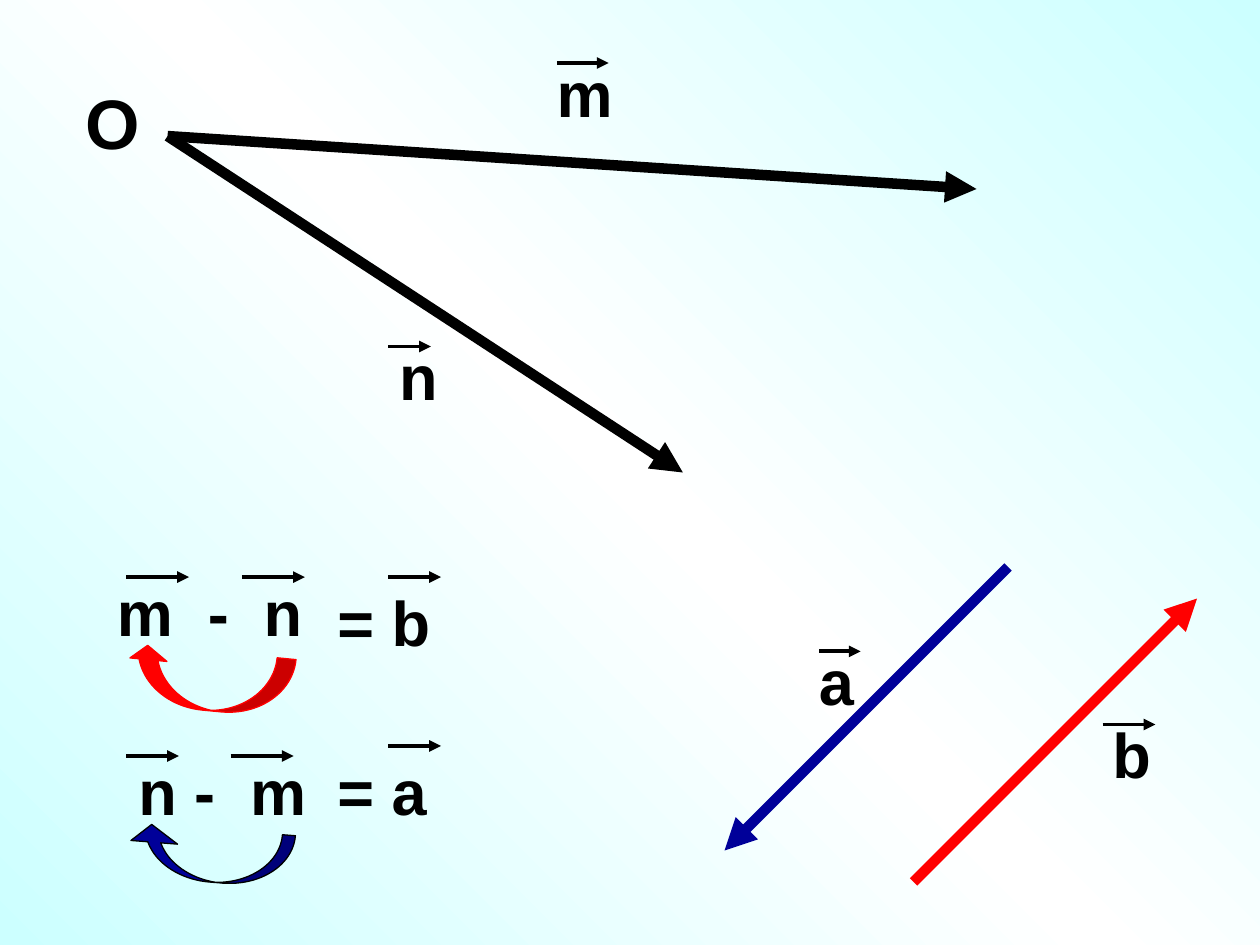
from copy import deepcopy

from pptx import Presentation
from pptx.dml.color import RGBColor
from pptx.enum.shapes import MSO_CONNECTOR as Connector, MSO_SHAPE as Shape
from pptx.enum.text import MSO_AUTO_SIZE as AutoSize
from pptx.oxml.ns import qn
from pptx.util import Inches, Pt

COLORS = {"black": "000000", "red": "FF0000", "blue": "000099", "cyan": "CCFFFF", "white": "FFFFFF"}
BACKGROUND_STOPS = [(0, "cyan"), (0.5, "white"), (1, "cyan")]
ORIGIN = (1.33, 1.08)
VECTORS = [
    (ORIGIN, (5.42, 3.75), "black"),
    (ORIGIN, (7.75, 1.5), "black"),
    ((8, 4.5), (5.75, 6.75), "blue"),
    ((7.25, 7), (9.5, 4.75), "red"),
]
SWAP_ARROWS = [
    {"top": 5.17, "height": 0.47, "rotation": 185.5, "adjustments": (0.32, 0.628, 0.24),
     "fill": "red", "line": "red"},
    {"top": 6.58, "height": 0.42, "rotation": 184.5, "adjustments": (0.246, 0.884, 0.333),
     "fill": "blue", "line": "black"},
]
LABELS = [
    {"text": "m  -  n", "box": (0.83, 4.5, 1.67), "bar_y": 4.58, "bars": [(1, 1.5), (1.92, 2.42)]},
    {"text": "= b", "box": (2.58, 4.58, 0.94), "bar_y": 4.58, "bars": [(3.08, 3.5)]},
    {"text": "n -  m", "box": (1, 5.92, 1.53), "bar_y": 6, "bars": [(1, 1.42), (1.83, 2.33)]},
    {"text": "= a", "box": (2.58, 5.92, 0.91), "bar_y": 5.92, "bars": [(3.08, 3.5)]},
    {"text": "m", "box": (4.32, 0.38, 0.65), "bar_y": 0.5, "bars": [(4.42, 4.83)]},
    {"text": "n", "box": (3.07, 2.63, 0.51), "bar_y": 2.75, "bars": [(3.08, 3.42)]},
    {"text": "a", "box": (6.4, 5.05, 0.48), "bar_y": 5.17, "bars": [(6.5, 6.83)]},
    {"text": "b", "box": (8.73, 5.63, 0.51), "bar_y": 5.75, "bars": [(8.75, 9.17)]},
]


def color(name):
    return RGBColor.from_string(COLORS[name])


def paint_background(slide):
    fill = slide.background.fill
    fill.gradient()
    fill.gradient_angle = 45
    first_stop = fill._fill._gradFill.find(qn("a:gsLst"))[0]
    first_stop.addnext(deepcopy(first_stop))
    for stop, (position, name) in zip(fill.gradient_stops, BACKGROUND_STOPS):
        stop.position = position
        stop.color.rgb = color(name)


def add_text(shapes, text, left, top, width, height=0.7, size=36, name="black"):
    box = shapes.add_textbox(Inches(left), Inches(top), Inches(width), Inches(height))
    frame = box.text_frame
    frame.word_wrap = False
    frame.auto_size = AutoSize.SHAPE_TO_FIT_TEXT
    run = frame.paragraphs[0].add_run()
    run.text = text
    run.font.name, run.font.size, run.font.bold = "Arial", Pt(size), True
    run.font.color.rgb = color(name)


def add_arrow(shapes, start, end, name="black", width=2.25):
    arrow = shapes.add_connector(Connector.STRAIGHT, *map(Inches, start + end))
    arrow.line.color.rgb = color(name)
    arrow.line.width = Pt(width)
    line = arrow.line._get_or_add_ln()
    line.append(line.makeelement(qn("a:tailEnd"), {"type": "triangle"}))
    properties = arrow._element.spPr
    properties.append(properties.makeelement(qn("a:effectLst"), {}))


def add_swap_arrow(shapes, top, height, rotation, adjustments, fill, line):
    shape = shapes.add_shape(Shape.CURVED_DOWN_ARROW, Inches(1), Inches(top), Inches(1.33), Inches(height))
    shape.shadow.inherit = False
    shape.rotation = rotation
    for index, value in enumerate(adjustments):
        shape.adjustments[index] = value
    shape.fill.solid()
    shape.fill.fore_color.rgb = color(fill)
    shape.line.color.rgb = color(line)
    shape.line.width = Pt(0.75)


def main():
    """Build the slide on subtracting vectors m and n."""
    presentation = Presentation()
    presentation.slide_width, presentation.slide_height = Inches(10), Inches(7.5)
    slide = presentation.slides.add_slide(presentation.slide_layouts[6])
    paint_background(slide)
    for start, end, name in VECTORS:
        add_arrow(slide.shapes, start, end, name, width=6)
    add_text(slide.shapes, "O", 0.58, 0.58, 0.63, height=0.77, size=40)
    for arrow in SWAP_ARROWS:
        add_swap_arrow(slide.shapes, **arrow)
    for label in LABELS:
        group = slide.shapes.add_group_shape()
        add_text(group.shapes, label["text"], *label["box"])
        for left, right in label["bars"]:
            add_arrow(group.shapes, (left, label["bar_y"]), (right, label["bar_y"]))
    presentation.save("out.pptx")


if __name__ == "__main__":
    main()
